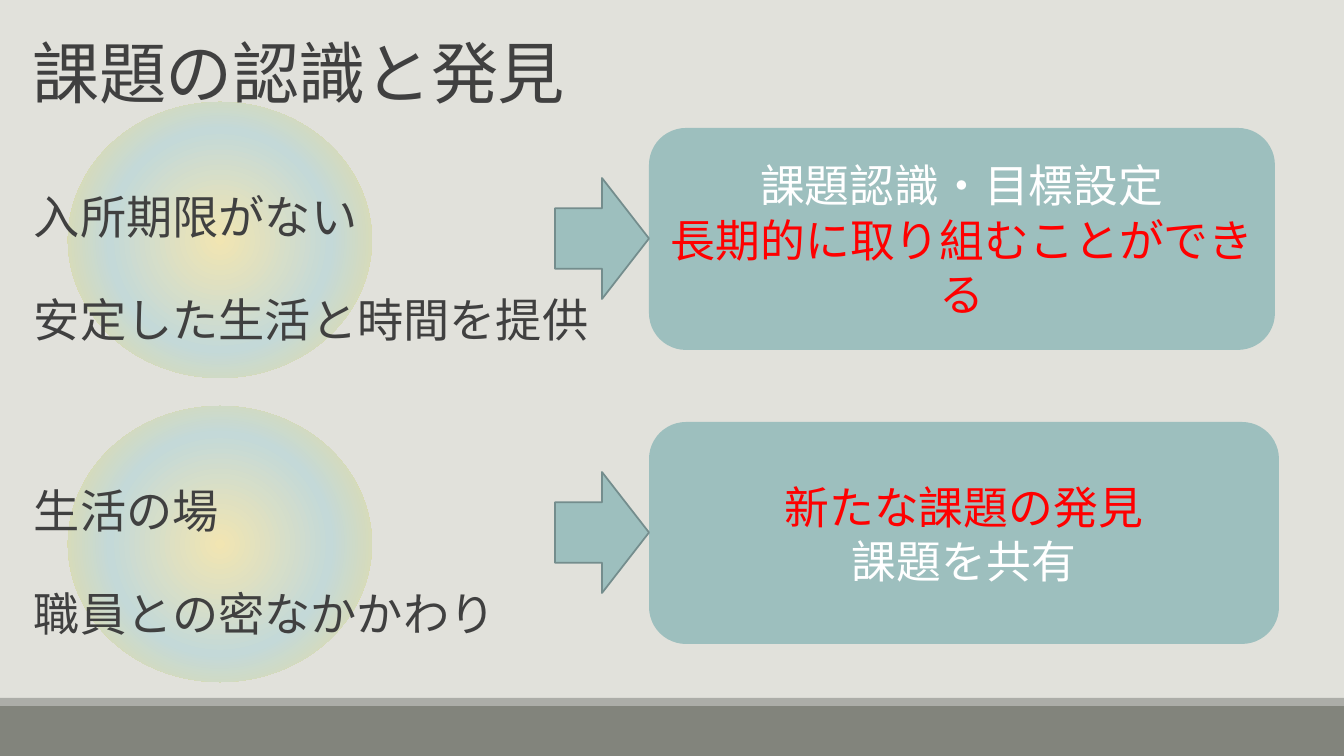
from dataclasses import dataclass

from lxml import etree
from pptx import Presentation
from pptx import util as u
from pptx.dml.color import RGBColor
from pptx.enum import shapes, text
from pptx.oxml import parse_xml
from pptx.oxml.ns import nsdecls, qn

PX = 914400 / 100.8

PAPER = RGBColor(0xE1, 0xE1, 0xDB)
STONE = RGBColor(0x82, 0x84, 0x7C)
ASH = RGBColor(0xAC, 0xAD, 0xA8)
TEAL = RGBColor(0x9D, 0xBF, 0xBE)
EDGE = RGBColor(0x74, 0x8D, 0x8D)
INK = RGBColor(0x40, 0x40, 0x40)
WHITE = RGBColor(0xFF, 0xFF, 0xFF)
RED = RGBColor(0xFF, 0x00, 0x00)
GLOW = ((0, "F1E5B2"), (54000, "C4D9D8"), (100000, "EFDD93"))

LATIN = "Calibri"
ASIAN = "Noto Sans CJK JP"
KIND = shapes.MSO_SHAPE
LEFT, MID = text.PP_ALIGN.LEFT, text.PP_ALIGN.CENTER


@dataclass
class Line:
    words: str
    color: RGBColor = INK


@dataclass
class Row:
    top: int
    orb: int
    wide: int
    facts: list[Line]
    goals: list[Line]


ROWS = [
    Row(128, 102, 626,
        [Line("入所期限がない"), Line("安定した生活と時間を提供")],
        [Line("課題認識・目標設定", WHITE),
         Line("長期的に取り組むことができる", RED)]),
    Row(422, 406, 630,
        [Line("生活の場"), Line("職員との密なかかわり")],
        [Line("新たな課題の発見", RED), Line("課題を共有", WHITE)]),
]


def px(*sizes: int) -> list[u.Emu]:
    return [u.Emu(round(size * PX)) for size in sizes]


def add_form(home, kind, box: tuple, color: RGBColor = TEAL):
    form = home.add_shape(kind, *px(*box))
    form.shadow.inherit = False
    form.fill.solid()
    form.fill.fore_color.rgb = color
    form.line.fill.background()
    return form


def add_orb(home, top: int) -> None:
    """Draw a disc whose colours spread from its centre."""
    orb = add_form(home, KIND.OVAL, (68, top, 304, 276))
    stops = "".join(f'<a:gs pos="{pos}"><a:srgbClr val="{tone}"/></a:gs>'
                    for pos, tone in GLOW)
    grad = parse_xml(
        f'<a:gradFill {nsdecls("a")} rotWithShape="1"><a:gsLst>{stops}</a:gsLst>'
        '<a:path path="circle"><a:fillToRect l="50000" t="50000" r="50000" '
        'b="50000"/></a:path></a:gradFill>')
    solid = orb.element.spPr.find(qn("a:solidFill"))
    solid.getparent().replace(solid, grad)


def write(frame, lines: list[Line], size: int, face: str, form: dict) -> None:
    frame.word_wrap = True
    for num, line in enumerate(lines):
        para = frame.add_paragraph() if num else frame.paragraphs[0]
        for key, val in form.items():
            setattr(para, key, val)
        run = para.add_run()
        run.text = line.words
        for key, val in {"size": u.Pt(size), "name": face}.items():
            setattr(run.font, key, val)
        run.font.color.rgb = line.color
        etree.SubElement(run.font._element, qn("a:ea"), typeface=ASIAN)


def add_title(home) -> None:
    frame = home.add_textbox(*px(-28, 21, 654, 96)).text_frame
    frame.vertical_anchor = text.MSO_ANCHOR.BOTTOM
    write(frame, [Line("課題の認識と発見")], 48, LATIN,
          {"alignment": MID, "line_spacing": 0.85})
    frame.paragraphs[0].runs[0].font._element.set("spc", "-50")


def add_facts(home, row: Row) -> None:
    frame = home.add_textbox(*px(34, row.top + 22, 586, 200)).text_frame
    for side, gap in {"left": 0, "right": 0, "top": 9, "bottom": 5}.items():
        setattr(frame, f"margin_{side}", px(gap)[0])
    write(frame, row.facts, 33, LATIN,
          {"alignment": LEFT, "line_spacing": u.Pt(60.5),
           "space_after": u.Pt(13)})


def add_goals(home, row: Row) -> None:
    group = home.add_group_shape().shapes
    card = add_form(group, KIND.ROUNDED_RECTANGLE,
                    (649, row.top, row.wide, 222))
    card.text_frame.vertical_anchor = text.MSO_ANCHOR.MIDDLE
    write(card.text_frame, row.goals, 32, ASIAN,
          {"alignment": MID, "line_spacing": u.Pt(38.6)})
    arrow = add_form(group, KIND.RIGHT_ARROW, (555, row.top + 50, 94, 121))
    arrow.line.color.rgb = EDGE
    arrow.line.width = u.Pt(1.25)


def main() -> None:
    deck = Presentation()
    deck.slide_width, deck.slide_height = px(1344, 756)
    slide = deck.slides.add_slide(deck.slide_layouts[6])
    slide.background.fill.solid()
    slide.background.fill.fore_color.rgb = PAPER
    home = slide.shapes
    add_form(home, KIND.RECTANGLE, (0, 706, 1344, 50), STONE)
    add_form(home, KIND.RECTANGLE, (0, 698, 1344, 8), ASH)
    for row in ROWS:
        add_orb(home, row.orb)
    add_title(home)
    for row in ROWS:
        add_facts(home, row)
        add_goals(home, row)
    deck.save("out.pptx")


if __name__ == "__main__":
    main()
